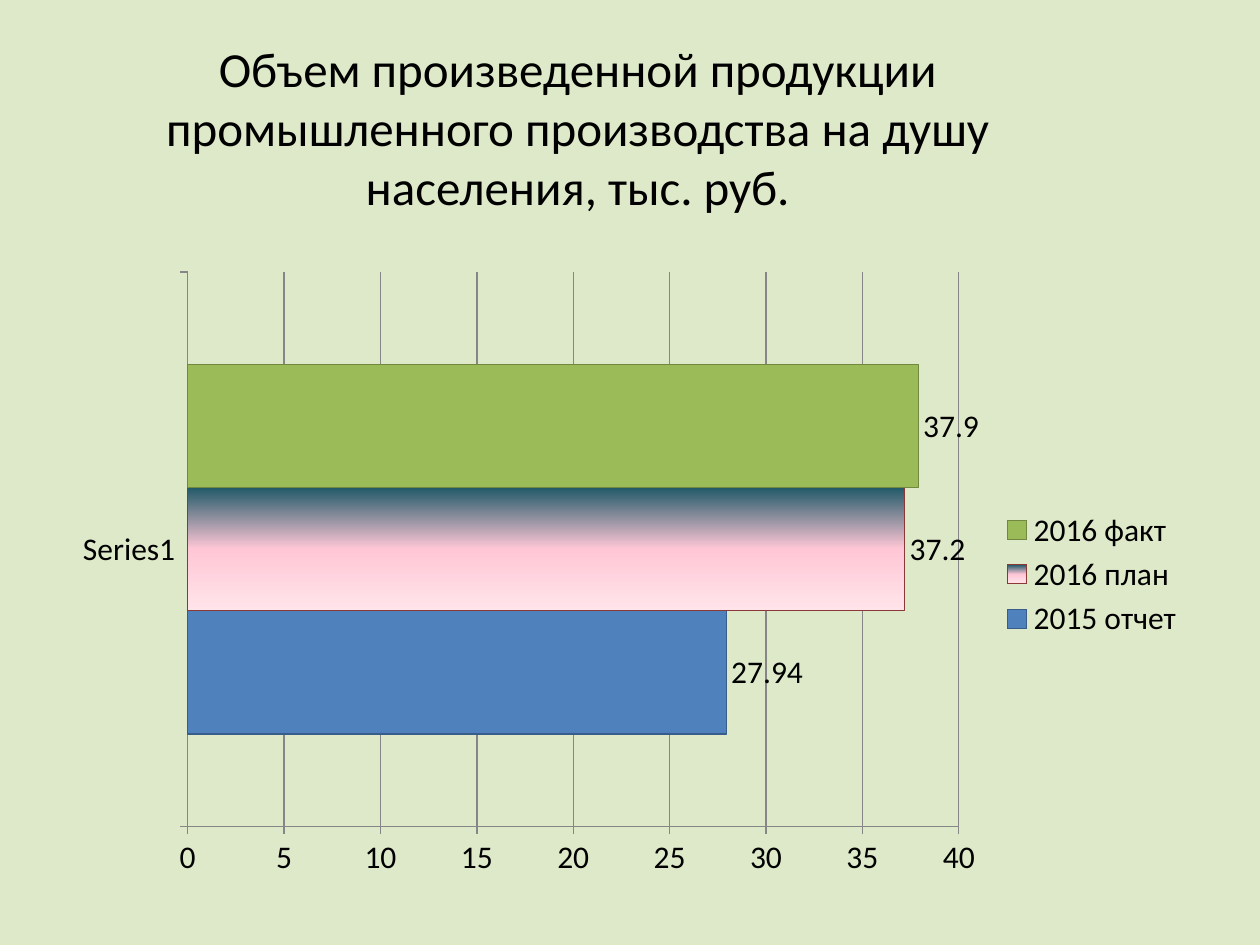
from copy import deepcopy

from lxml import etree
from pptx import Presentation
from pptx.chart.data import CategoryChartData
from pptx.dml.color import RGBColor
from pptx.enum.chart import XL_CHART_TYPE, XL_LABEL_POSITION, XL_LEGEND_POSITION, XL_TICK_MARK
from pptx.enum.text import MSO_ANCHOR, PP_ALIGN
from pptx.oxml.ns import qn
from pptx.util import Cm, Pt

BAR_CLUSTERED = XL_CHART_TYPE.BAR_CLUSTERED
OUTSIDE_END = XL_LABEL_POSITION.OUTSIDE_END
LEGEND_RIGHT = XL_LEGEND_POSITION.RIGHT
TICK_OUTSIDE, TICK_NONE = XL_TICK_MARK.OUTSIDE, XL_TICK_MARK.NONE

BACKGROUND = RGBColor(0xDE, 0xE9, 0xC9)
BLACK = RGBColor(0x00, 0x00, 0x00)
GREY = RGBColor(0x86, 0x86, 0x86)
BLUE = RGBColor(0x4F, 0x81, 0xBD)
DARK_BLUE = RGBColor(0x38, 0x5D, 0x8A)
DARK_RED = RGBColor(0x8C, 0x38, 0x36)
GREEN = RGBColor(0x9B, 0xBB, 0x59)
DARK_GREEN = RGBColor(0x71, 0x89, 0x3F)
PLAN_GRADIENT = [
    (0, RGBColor(0x21, 0x59, 0x68)),
    (0.5, RGBColor(0xFF, 0xC7, 0xD6)),
    (1, RGBColor(0xFF, 0xE4, 0xEA)),
]

# Name, value, fill (one colour or gradient stops), outline
YEARS = [
    ("2015 отчет", 27.94, BLUE, DARK_BLUE),
    ("2016 план", 37.2, PLAN_GRADIENT, DARK_RED),
    ("2016 факт", 37.9, GREEN, DARK_GREEN),
]
PLOT_LAYOUT = {
    "layoutTarget": "inner", "xMode": "edge", "yMode": "edge",
    "x": 0.11, "y": 0.02, "w": 0.68, "h": 0.88,
}


def set_font(font, size):
    values = {"name": "Calibri", "size": Pt(size), "bold": False}
    for attribute, value in values.items():
        setattr(font, attribute, value)
    font.color.rgb = BLACK


prs = Presentation()
prs.slide_width, prs.slide_height = Cm(25.4), Cm(19.05)
slide = prs.slides.add_slide(prs.slide_layouts[6])
slide.background.fill.solid()
slide.background.fill.fore_color.rgb = BACKGROUND

# Title
title = slide.shapes.add_textbox(Cm(1.27), Cm(0.76), Cm(20.75), Cm(3.6)).text_frame
title.word_wrap = True
title.vertical_anchor = MSO_ANCHOR.MIDDLE
heading = title.paragraphs[0]
heading.alignment = PP_ALIGN.CENTER
heading_run = heading.add_run()
heading_run.text = ("Объем произведенной продукции промышленного производства "
                    "на душу населения, тыс. руб.")
set_font(heading_run.font, 28)

# Chart
output = CategoryChartData()
output.categories = ["Series1"]
for name, value, _, _ in YEARS:
    output.add_series(name, [value])
chart = slide.shapes.add_chart(
    BAR_CLUSTERED, Cm(1.27), Cm(5.23), Cm(22.86), Cm(12.7), output).chart
chart.has_title = False
set_font(chart.font, 18)
chart.has_legend = True
chart.legend.position = LEGEND_RIGHT
chart.legend.include_in_layout = False

# Plot area position, as fractions of the chart
plot_area = chart.plots[0]._element.getparent()
for old_layout in plot_area.findall(qn("c:layout")):
    plot_area.remove(old_layout)
layout = etree.Element(qn("c:layout"))
manual = etree.SubElement(layout, qn("c:manualLayout"))
for tag, value in PLOT_LAYOUT.items():
    etree.SubElement(manual, qn(f"c:{tag}")).set("val", str(value))
plot_area.insert(0, layout)

# Axes
value_axis = chart.value_axis
axis_values = {"minimum_scale": 0, "maximum_scale": 40, "major_unit": 5,
               "has_major_gridlines": True}
for attribute, value in axis_values.items():
    setattr(value_axis, attribute, value)
for axis in (chart.category_axis, value_axis):
    axis.major_tick_mark = TICK_OUTSIDE
    axis.minor_tick_mark = TICK_NONE
for line in (chart.category_axis.format.line, value_axis.format.line,
             value_axis.major_gridlines.format.line):
    line.color.rgb = GREY
    line.width = Pt(0.75)

# Bars
bars = chart.plots[0]
bars.gap_width = 150
bars.overlap = 0
bars.vary_by_categories = False
for series, (_, _, colour, outline) in zip(bars.series, YEARS):
    fill = series.format.fill
    if colour is PLAN_GRADIENT:
        fill.gradient()
        fill.gradient_angle = 270
        stop_list = series._element.find(".//" + qn("a:gsLst"))
        stop_list.append(deepcopy(stop_list[0]))
        for stop, (position, stop_colour) in zip(fill.gradient_stops, PLAN_GRADIENT):
            stop.position = position
            stop.color.rgb = stop_colour
    else:
        fill.solid()
        fill.fore_color.rgb = colour
    series.format.line.color.rgb = outline
    series.format.line.width = Pt(0.75)
    series.invert_if_negative = False
    labels = series.data_labels
    labels.show_value = True
    labels.position = OUTSIDE_END
    set_font(labels.font, 18)

prs.save("out.pptx")
